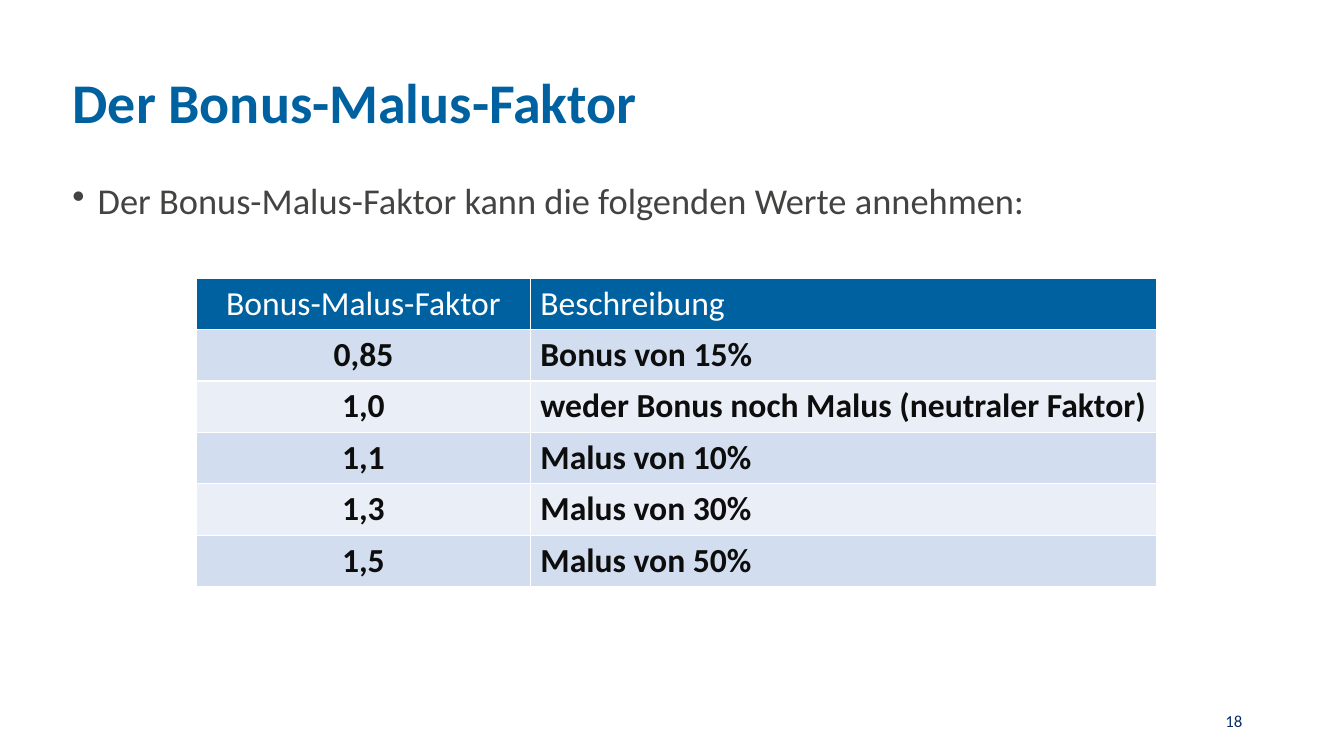
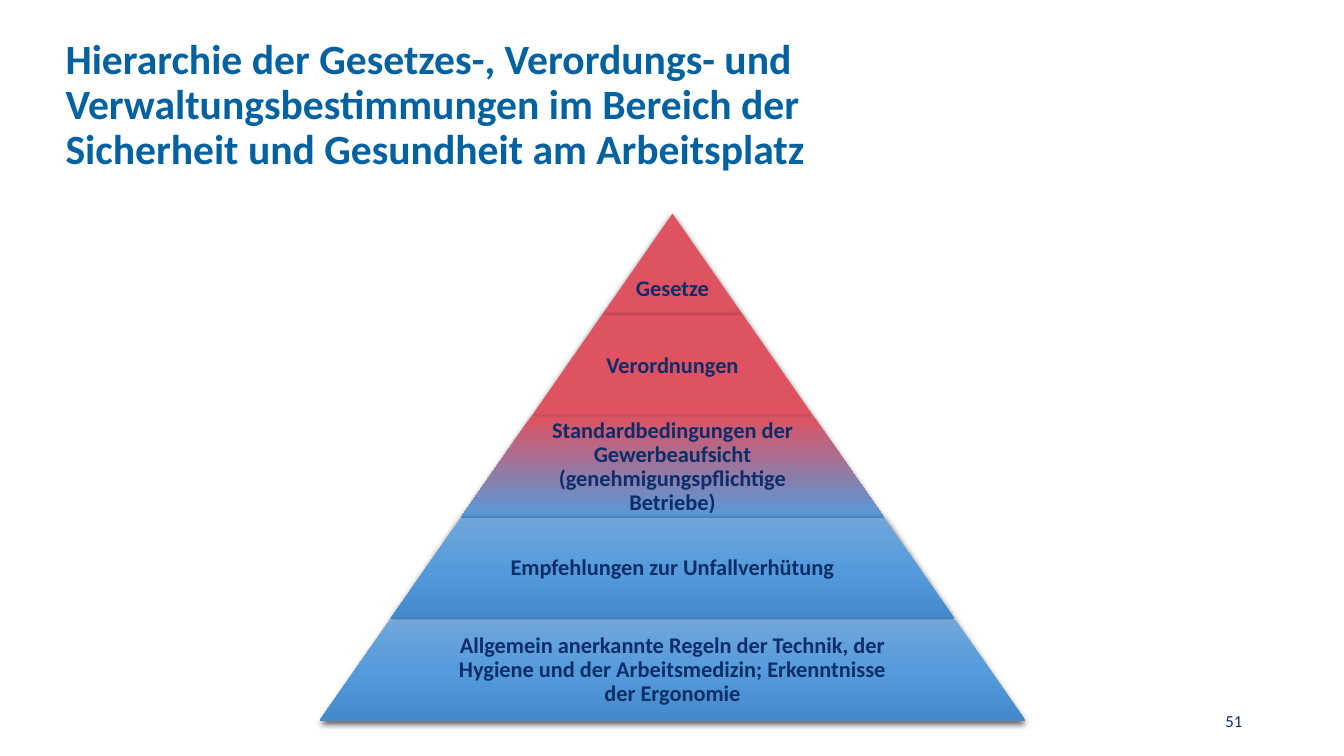
"""Build two slides: a table of bonus factors and a pyramid of rules."""
from lxml.etree import SubElement as Sub
from pptx import Presentation as Deck
from pptx.dml.color import RGBColor as RGB
from pptx.enum.shapes import MSO_SHAPE as Shape
from pptx.enum.text import MSO_ANCHOR as Anchor, MSO_AUTO_SIZE as Auto, PP_ALIGN as Align
from pptx.oxml.ns import qn
from pptx.util import Inches, Pt

FONT = "Calibri"
BLUE, NAVY, GREY, BLACK, WHITE = "0061A1", "0C2D69", "434342", "0D0D0D", "FFFFFF"
RED = "DE5261"
BANDS = "D2DEEF", "EAEFF7"
BLUES = "71A6DB", "559BDB", "448ACA"
ROWS = [
    ("Bonus-Malus-Faktor", "Beschreibung"),
    ("0,85", "Bonus von 15%"),
    ("1,0", "weder Bonus noch Malus (neutraler Faktor)"),
    ("1,1", "Malus von 10%"),
    ("1,3", "Malus von 30%"),
    ("1,5", "Malus von 50%"),
]
TIERS = [
    ("Gesetze", [RED]),
    ("Verordnungen", [RED]),
    ("Standardbedingungen der Gewerbeaufsicht (genehmigungspflichtige Betriebe)",
     [RED, BLUES[1]]),
    ("Empfehlungen zur Unfallverhütung", BLUES),
    ("Allgemein anerkannte Regeln der Technik, der Hygiene und der Arbeitsmedizin; "
     "Erkenntnisse der Ergonomie", BLUES),
]


def paint(color, code):
    """Set a colour from a hex string."""
    color.rgb = RGB.from_string(code)


def write(frame, text, size=16, code=NAVY, bold=False, align=Align.LEFT,
          line=None, bullet=False):
    """Put formatted text in the first paragraph of a frame."""
    par = frame.paragraphs[0]
    par.text = text
    par.alignment, par.line_spacing = align, line
    if bullet:
        props = par._p.get_or_add_pPr()
        props.set("marL", str(Inches(0.25)))
        props.set("indent", str(Inches(-0.25)))
        Sub(props, qn("a:buChar"), char="•")
    for run in par.runs:
        font = run.font
        font.name, font.size, font.bold = FONT, Pt(size), bold
        paint(font.color, code)


def add_text(slide, box, text, anchor=Anchor.MIDDLE, pad=None, **style):
    """Add a wrapped text box."""
    frame = slide.shapes.add_textbox(*map(Inches, box)).text_frame
    frame.word_wrap, frame.vertical_anchor = True, anchor
    if pad is not None:
        frame.margin_left = frame.margin_right = Inches(pad)
        frame.margin_top = frame.margin_bottom = Inches(pad)
    write(frame, text, **style)


def add_slide(deck, text, box, size, number):
    """Add a slide with its title and page number."""
    slide = deck.slides.add_slide(deck.slide_layouts[5])
    title = slide.shapes.title
    title.left, title.top, title.width, title.height = map(Inches, box)
    frame = title.text_frame
    frame.auto_size, frame.vertical_anchor = Auto.NONE, Anchor.MIDDLE
    write(frame, text, size=size, code=BLUE, bold=True, line=0.9)
    add_text(slide, (9.42, 6.95, 3, 0.4), number, size=12, align=Align.RIGHT)
    return slide


def add_grid(slide, rows, left, top, widths, height):
    """Add a table with a header row and banded body."""
    box = map(Inches, (left, top, sum(widths), height * len(rows)))
    grid = slide.shapes.add_table(len(rows), len(widths), *box).table
    for col, width in zip(grid.columns, widths):
        col.width = Inches(width)
    for r, row in enumerate(rows):
        for c, text in enumerate(row):
            cell = grid.cell(r, c)
            cell.fill.solid()
            paint(cell.fill.fore_color, BANDS[(r - 1) % 2] if r else BLUE)
            write(cell.text_frame, text, size=24, code=BLACK if r else WHITE,
                  bold=r > 0, align=Align.LEFT if c else Align.CENTER)


def blend(fill, props, codes):
    """Fill with one colour, or with even stops from top to bottom."""
    if len(codes) == 1:
        fill.solid()
        paint(fill.fore_color, codes[0])
        return
    fill.gradient()
    fill.gradient_angle = 270
    stops = props.find(".//" + qn("a:gsLst"))
    stops.clear()
    for i, code in enumerate(codes):
        stop = Sub(stops, qn("a:gs"), pos=str(100000 * i // (len(codes) - 1)))
        Sub(stop, qn("a:srgbClr"), val=code)


def shade(props):
    """Add a soft shadow below a shape."""
    cast = Sub(Sub(props, qn("a:effectLst")), qn("a:outerShdw"), blurRad=str(Pt(4.5)),
               dist=str(Pt(1.5)), dir="5400000", rotWithShape="0")
    Sub(Sub(cast, qn("a:srgbClr"), val="000000"), qn("a:alpha"), val="63000")


def add_tiers(slide, tiers, left, top, width, height):
    """Stack trapezoids into a pyramid and label each one."""
    step, tall = width / len(tiers), height / len(tiers)
    mid = left + width / 2
    for i, (text, codes) in enumerate(tiers):
        wide, y = step * (i + 1), top + tall * i
        box = map(Inches, (mid - wide / 2, y, wide, tall))
        tier = slide.shapes.add_shape(Shape.TRAPEZOID, *box)
        tier.adjustments[0] = step / 2 / tall
        props = tier._element.spPr
        blend(tier.fill, props, codes)
        tier.line.fill.background()
        shade(props)
        span = 0.65 * wide if i else wide
        drop = 0 if i else tall / 2
        add_text(slide, (mid - span / 2, y + drop, span, tall - drop), text, pad=0.02,
                 bold=True, align=Align.CENTER, line=0.9)


def main():
    """Build and save the deck."""
    deck = Deck()
    deck.slide_width, deck.slide_height = Inches(13.33), Inches(7.5)

    slide = add_slide(deck, "Der Bonus-Malus-Faktor", (0.62, 0.32, 11.5, 1.45), 40, "18")
    add_text(slide, (0.62, 1.77, 12.19, 0.6),
             "Der Bonus-Malus-Faktor kann die folgenden Werte annehmen:",
             anchor=Anchor.TOP, size=26, code=GREY, align=Align.JUSTIFY, line=0.9,
             bullet=True)
    add_grid(slide, ROWS, 1.95, 2.76, (3.31, 6.21), 0.51)

    slide = add_slide(
        deck, "Hierarchie der Gesetzes-, Verordungs- und Verwaltungsbestimmungen "
        "im Bereich der\vSicherheit und Gesundheit am Arbeitsplatz",
        (0.55, 0.25, 11.5, 1.6), 29.7, "51")
    add_tiers(slide, TIERS, 3.17, 2.12, 7, 5.03)

    deck.save("out.pptx")


if __name__ == "__main__":
    main()
